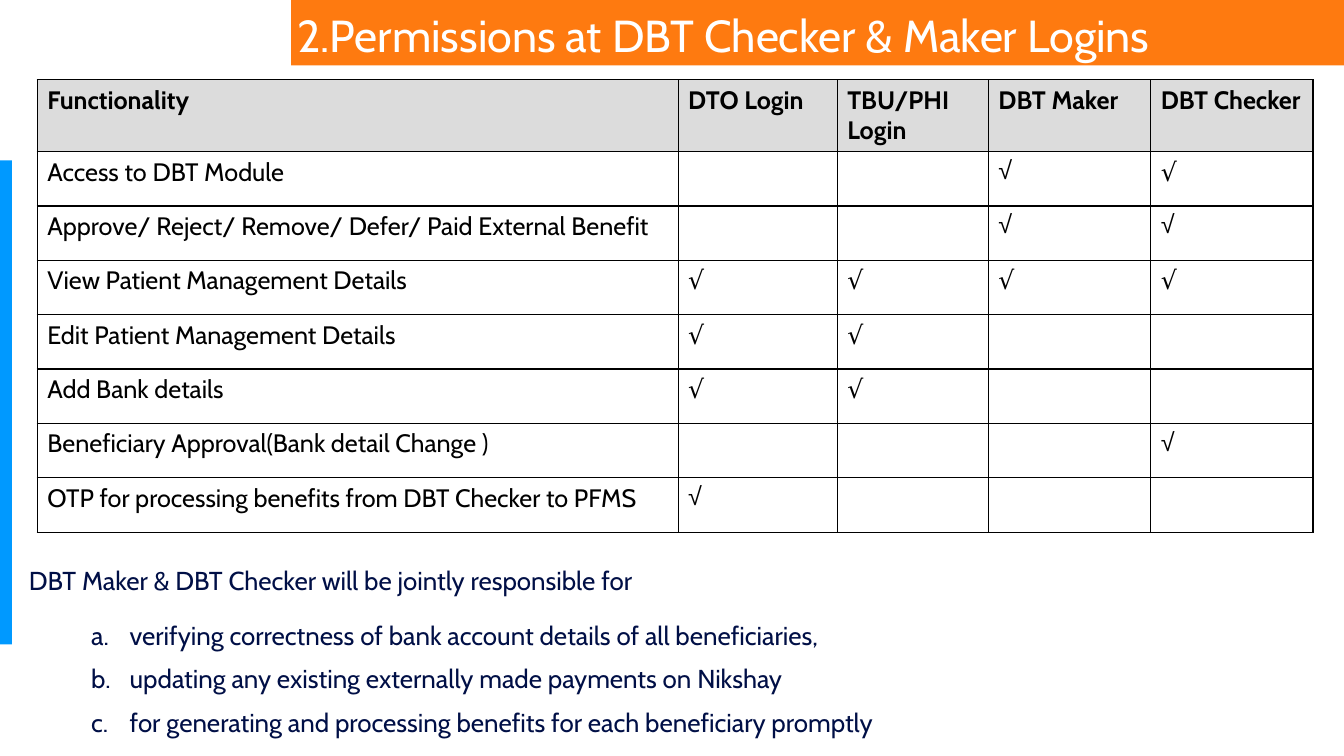
from dataclasses import dataclass

from lxml.etree import SubElement
from pptx import Presentation
from pptx.dml.color import RGBColor as RGB
from pptx.enum.shapes import MSO_SHAPE as Shape
from pptx.enum.text import MSO_ANCHOR as Anchor, PP_ALIGN as Align
from pptx.oxml.ns import qn
from pptx.util import Cm, Pt


@dataclass(frozen=True)
class Theme:
    orange: str = "FE7A10"
    blue: str = "0099FF"
    navy: str = "000F46"
    white: str = "FFFFFF"
    black: str = "000000"
    grey: str = "DCDCDC"
    body_font: str = "Cabin"
    mark_font: str = "Arial"
    title_size: float = 32
    table_size: float = 18
    duty_size: float = 18.5


THEME = Theme()
SLIDE_W, SLIDE_H = 33.87, 19.05

LOGINS = ["Functionality", "DTO Login", "TBU/PHI Login", "DBT Maker", "DBT Checker"]
COLUMN_WIDTHS = [16.15, 4.01, 3.81, 4.09, 4.09]
HEADER_HEIGHT, ROW_HEIGHT = 1.81, 1.37
# One letter per login: C or A is a tick in Cabin or Arial, - is no permission
MARK_FONTS = {"C": THEME.body_font, "A": THEME.mark_font}
PERMISSIONS = [
    ("Access to DBT Module", "--AC"),
    ("Approve/ Reject/ Remove/ Defer/ Paid External Benefit", "--AA"),
    ("View Patient Management Details", "CCCC"),
    ("Edit Patient Management Details", "CC--"),
    ("Add Bank details", "CC--"),
    ("Beneficiary Approval(Bank detail Change )", "---A"),
    ("OTP for processing benefits from DBT Checker to PFMS", "A---"),
]
DUTIES_INTRO = "DBT Maker & DBT Checker will be jointly responsible for"
DUTIES = [
    "verifying correctness of bank account details of all beneficiaries,",
    "updating any existing externally made payments on Nikshay",
    "for generating and processing benefits for each beneficiary promptly",
]


def style(paragraph, size, color, name=THEME.body_font, bold=False):
    font = paragraph.font
    font.size, font.name, font.bold = Pt(size), name, bold
    font.color.rgb = RGB.from_string(color)


def add_block(slide, left, top, width, height, color):
    block = slide.shapes.add_shape(Shape.RECTANGLE, Cm(left), Cm(top), Cm(width), Cm(height))
    block.shadow.inherit = False
    block.fill.solid()
    block.fill.fore_color.rgb = RGB.from_string(color)
    block.line.fill.background()


def add_title(slide, left, top, width, height):
    # Orange band with the title over it
    add_block(slide, left, top, width, height, THEME.orange)
    title = slide.shapes.add_textbox(
        Cm(left - 0.1), Cm(top), Cm(width), Cm(height + 0.28)).text_frame
    title.word_wrap = True
    title.vertical_anchor = Anchor.MIDDLE
    heading = title.paragraphs[0]
    heading.text = "2.Permissions at DBT Checker & Maker Logins"
    heading.line_spacing = 0.9
    style(heading, THEME.title_size, THEME.white)


def fill_cell(cell, text, fill, name=THEME.body_font, bold=False):
    paragraph = cell.text_frame.paragraphs[0]
    paragraph.text = text
    style(paragraph, THEME.table_size, THEME.black, name, bold)
    # Borders go before the fill in the cell properties
    properties = cell._tc.get_or_add_tcPr()
    for side in ("a:lnL", "a:lnR", "a:lnT", "a:lnB"):
        border = SubElement(properties, qn(side), w=str(Pt(1)))
        ink = SubElement(border, qn("a:solidFill"))
        SubElement(ink, qn("a:srgbClr"), val=THEME.black)
    cell.fill.solid()
    cell.fill.fore_color.rgb = RGB.from_string(fill)


def add_permissions(slide, left, top):
    height = HEADER_HEIGHT + ROW_HEIGHT * len(PERMISSIONS)
    grid = slide.shapes.add_table(
        len(PERMISSIONS) + 1, len(LOGINS),
        Cm(left), Cm(top), Cm(sum(COLUMN_WIDTHS)), Cm(height)).table
    grid.first_row = grid.horz_banding = False
    for column, width in zip(grid.columns, COLUMN_WIDTHS):
        column.width = Cm(width)
    for row in grid.rows:
        row.height = Cm(ROW_HEIGHT)
    grid.rows[0].height = Cm(HEADER_HEIGHT)

    # Header row
    for col, login in enumerate(LOGINS):
        fill_cell(grid.cell(0, col), login, THEME.grey, bold=True)
    # One row per function, with a tick for each login that may use it
    for row, (function, marks) in enumerate(PERMISSIONS, start=1):
        fill_cell(grid.cell(row, 0), function, THEME.white)
        for col, mark in enumerate(marks, start=1):
            tick = "√" if mark in MARK_FONTS else ""
            fill_cell(grid.cell(row, col), tick, THEME.white,
                      MARK_FONTS.get(mark, THEME.body_font))


def add_lettering(paragraph):
    properties = paragraph._p.get_or_add_pPr()
    properties.set("marL", str(Cm(2.54)))
    properties.set("indent", str(Cm(-0.97)))
    color = SubElement(properties, qn("a:buClr"))
    SubElement(color, qn("a:srgbClr"), val=THEME.navy)
    SubElement(properties, qn("a:buFont"), typeface=THEME.body_font)
    SubElement(properties, qn("a:buAutoNum"), type="alphaLcPeriod")


def add_duties(slide, left, top, width, height):
    duties = slide.shapes.add_textbox(Cm(left), Cm(top), Cm(width), Cm(height)).text_frame
    duties.word_wrap = True
    duties.margin_top = duties.margin_bottom = Cm(0.25)
    intro = duties.paragraphs[0]
    intro.text = DUTIES_INTRO
    items = [duties.add_paragraph() for _ in DUTIES]
    for item, duty in zip(items, DUTIES):
        item.text = duty
        item.level = 1
        add_lettering(item)
    items[0].space_before = Pt(8)
    for paragraph in duties.paragraphs:
        paragraph.alignment = Align.JUSTIFY
        paragraph.line_spacing = 1.4
        style(paragraph, THEME.duty_size, THEME.navy)


def main():
    deck = Presentation()
    deck.slide_width, deck.slide_height = Cm(SLIDE_W), Cm(SLIDE_H)
    slide = deck.slides.add_slide(deck.slide_layouts[6])
    add_title(slide, 7.34, 0, SLIDE_W - 7.34, 1.65)
    add_block(slide, 0, 4.04, 0.3, 12.2, THEME.blue)  # accent on the left edge
    add_permissions(slide, 0.94, 2.01)
    add_duties(slide, 0.48, 13.67, 32.89, 5.05)
    deck.save("out.pptx")


if __name__ == "__main__":
    main()
